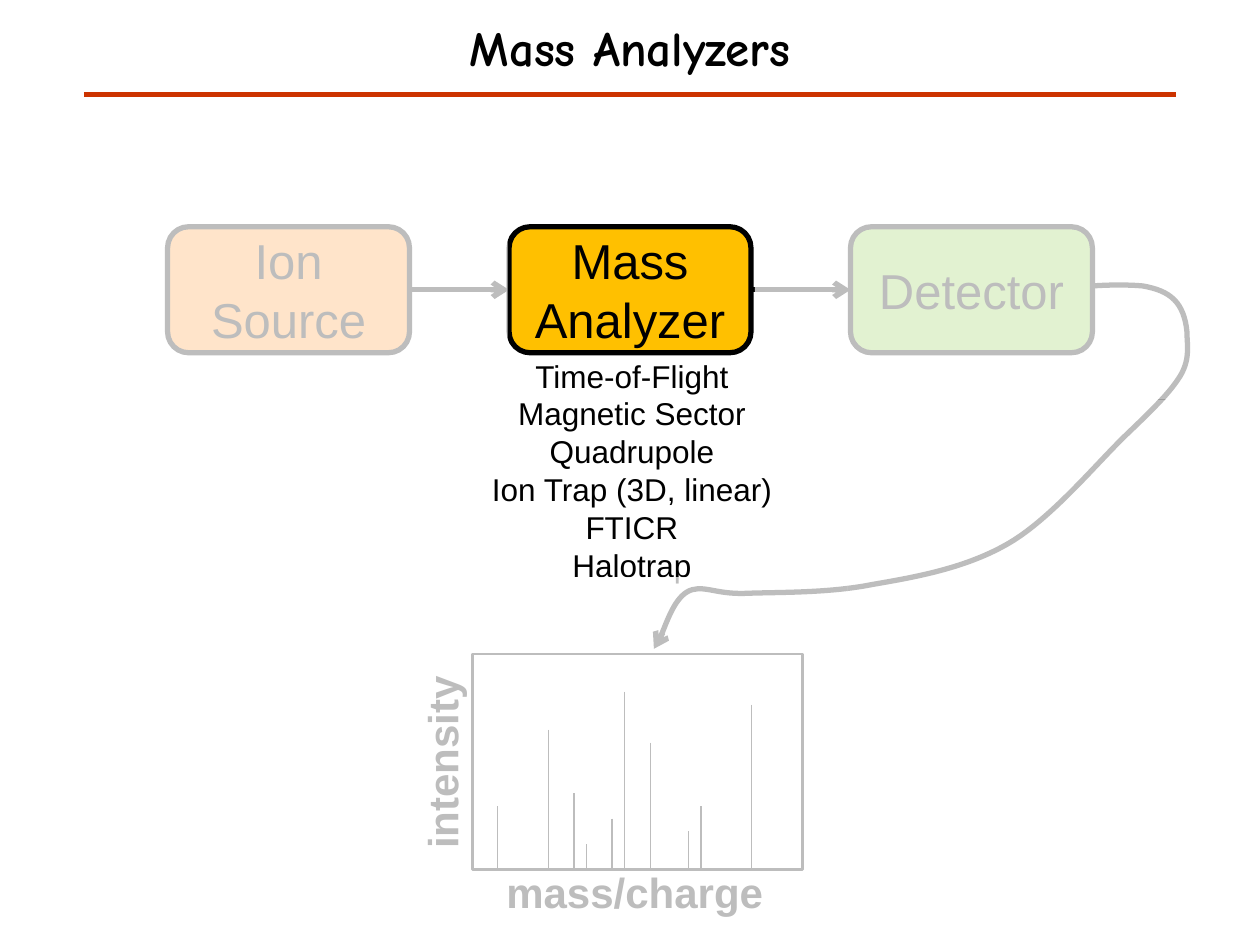
from lxml.etree import SubElement
from pptx import Presentation
from pptx.dml.color import RGBColor
from pptx.enum.shapes import MSO_CONNECTOR as Connector, MSO_SHAPE as Shape
from pptx.enum.text import MSO_ANCHOR as Anchor, MSO_AUTO_SIZE as AutoSize, PP_ALIGN as Align
from pptx.oxml.ns import qn
from pptx.util import Inches, Pt

COLORS = {"ink": "000000", "paper": "FFFFFF", "rule": "CC3300",
          "source": "FF9933", "analyzer": "FFC000", "detector": "92D050"}
WIDTH, HEIGHT = 10, 7.5
TITLE = "Mass Analyzers"
STAGES = [("Ion Source", "source"), ("Mass Analyzer", "analyzer"), ("Detector", "detector")]
ANALYZERS = ["Time-of-Flight", "Magnetic Sector", "Quadrupole",
             "Ion Trap (3D, linear)", "FTICR", "Halotrap"]
STAGE_LEFT, STAGE_TOP, STAGE_WIDTH, STAGE_HEIGHT, STAGE_STEP = 1.33, 1.8, 1.92, 1, 2.71
PLOT_LEFT, PLOT_TOP, PLOT_WIDTH, PLOT_HEIGHT = 3.75, 5.19, 2.62, 1.71
PLOT_COLUMNS, PLOT_ROWS = 26, 17
PEAKS = {2: 5, 6: 11, 8: 6, 9: 2, 11: 4, 12: 14, 14: 10, 17: 3, 18: 5, 22: 13}
AXIS_LABELS = [("mass/charge", (3.92, 6.83, 2.26, 0.5), 0),
               ("intensity", (2.71, 5.79, 1.59, 0.5), 270)]
SIGNAL_START = (8.67, 2.27)
SIGNAL_CURVES = [
    ((8.81, 2.26), (8.96, 2.26), (9.07, 2.27)), ((9.18, 2.29), (9.26, 2.32), (9.32, 2.38)),
    ((9.38, 2.44), (9.41, 2.53), (9.42, 2.63)), ((9.42, 2.73), (9.45, 2.84), (9.37, 2.98)),
    ((9.29, 3.11), (9.17, 3.23), (8.94, 3.45)), ((8.71, 3.67), (8.35, 4.11), (8.01, 4.31)),
    ((7.67, 4.51), (7.27, 4.58), (6.92, 4.64)), ((6.57, 4.71), (6.16, 4.7), (5.92, 4.71)),
    ((5.67, 4.72), (5.57, 4.63), (5.45, 4.7)), ((5.34, 4.77), (5.26, 5.04), (5.21, 5.12)),
    ((5.17, 5.19), (5.18, 5.17), (5.19, 5.15))]
VEILS = [(5.99, 0.88, 3.62, 2.29), (0.41, 0.86, 3.62, 2.31),
         (2.92, 4.58, 3.81, HEIGHT - 4.58), (6.73, 3.17, 2.94, 3.5)]


def color(name):
    """Return the named colour."""
    return RGBColor.from_string(COLORS[name])


def inches(values):
    """Convert numbers to lengths."""
    return [Inches(value) for value in values]


def place(shape, box):
    """Move and size a shape."""
    for name, value in zip(("left", "top", "width", "height"), inches(box)):
        setattr(shape, name, value)


def write(shape, lines, size, align=Align.CENTER, font="Arial", bold=False, **frame_format):
    """Fill a shape with formatted paragraphs."""
    frame = shape.text_frame
    frame.text = "\n".join(lines)
    for name, value in frame_format.items():
        setattr(frame, name, value)
    for paragraph in frame.paragraphs:
        paragraph.alignment = align
        paragraph.space_before = Pt(0)
        run_font = paragraph.runs[0].font
        for name, value in {"name": font, "size": Pt(size), "bold": bold}.items():
            setattr(run_font, name, value)
        run_font.color.rgb = color("ink")


def stroke(shape, name, width, arrow=False):
    """Format an outline, with an optional arrowhead."""
    shape.line.color.rgb = color(name)
    shape.line.width = Pt(width)
    if arrow:
        SubElement(shape.line._get_or_add_ln(), qn("a:tailEnd"), type="arrow")


def add_box(shapes, kind, box, fill):
    """Add a filled shape without shadow."""
    shape = shapes.add_shape(kind, *inches(box))
    shape.shadow.inherit = False
    shape.fill.solid()
    shape.fill.fore_color.rgb = color(fill)
    return shape


def add_line(shapes, start, end, name, width, arrow=False):
    """Add a straight line without shadow."""
    line = shapes.add_connector(Connector.STRAIGHT, *inches(start + end))
    stroke(line, name, width, arrow)
    SubElement(line._element.spPr, qn("a:effectLst"))


def add_signal(shapes):
    """Add the curved arrow from detector to spectrum."""
    builder = shapes.build_freeform(*inches(SIGNAL_START), scale=1.0)
    builder.add_line_segments([inches(point) for curve in SIGNAL_CURVES for point in curve],
                              close=False)
    signal = builder.convert_to_shape()
    signal.shadow.inherit = False
    signal.fill.background()
    stroke(signal, "ink", 3, arrow=True)
    segments = list(signal._element.iter(qn("a:lnTo")))
    outline = segments[0].getparent()
    for first in range(0, len(segments), 3):
        curve = SubElement(outline, qn("a:cubicBezTo"))
        for segment in segments[first:first + 3]:
            curve.append(segment[0])
            outline.remove(segment)


def add_spectrum(shapes):
    """Add the framed peaks as one group."""
    group = shapes.add_group_shape().shapes
    frame = add_box(group, Shape.RECTANGLE, (PLOT_LEFT, PLOT_TOP, PLOT_WIDTH, PLOT_HEIGHT), "paper")
    stroke(frame, "ink", 1.5)
    base = PLOT_TOP + PLOT_HEIGHT
    for column, intensity in PEAKS.items():
        x = PLOT_LEFT + column * PLOT_WIDTH / PLOT_COLUMNS
        top = base - intensity * PLOT_HEIGHT / PLOT_ROWS
        add_line(group, (x, top), (x, base), "ink", 0.75)


def add_veil(shapes, box):
    """Add a translucent white cover."""
    veil = add_box(shapes, Shape.RECTANGLE, box, "paper")
    veil.line.fill.background()
    tint = veil._element.spPr.find(qn("a:solidFill"))[0]
    SubElement(tint, qn("a:alpha"), val="74000")


def main():
    """Build the slide."""
    presentation = Presentation()
    presentation.slide_width, presentation.slide_height = inches((WIDTH, HEIGHT))
    slide = presentation.slides.add_slide(presentation.slide_layouts[1])
    shapes = slide.shapes
    title, body = slide.placeholders

    place(title, (0, 0, WIDTH, HEIGHT / 10))
    write(title, [TITLE], 28, font="Comic Neue", bold=True, vertical_anchor=Anchor.MIDDLE)
    add_line(shapes, (WIDTH / 15, HEIGHT / 10), (WIDTH * 14 / 15, HEIGHT / 10), "rule", 2.5)

    place(body, (3.79, 2.78, 2.45, 1.92))
    write(body, ANALYZERS, 18, word_wrap=False, auto_size=AutoSize.SHAPE_TO_FIT_TEXT)
    for paragraph in body.text_frame.paragraphs:
        properties = paragraph._p.get_or_add_pPr()
        properties.set("marL", "0")
        properties.set("indent", "0")
        SubElement(properties, qn("a:buNone"))

    middle = STAGE_TOP + STAGE_HEIGHT / 2
    for index, (label, fill) in enumerate(STAGES):
        left = STAGE_LEFT + index * STAGE_STEP
        stage = add_box(shapes, Shape.ROUNDED_RECTANGLE,
                        (left, STAGE_TOP, STAGE_WIDTH, STAGE_HEIGHT), fill)
        stroke(stage, "ink", 3)
        write(stage, [label], 28, vertical_anchor=Anchor.MIDDLE, word_wrap=True)
        if index:
            add_line(shapes, (left - STAGE_STEP + STAGE_WIDTH, middle), (left, middle),
                     "ink", 3, arrow=True)

    add_spectrum(shapes)
    for label, box, rotation in AXIS_LABELS:
        text_box = shapes.add_textbox(*inches(box))
        text_box.rotation = rotation
        write(text_box, [label], 24, Align.LEFT, bold=True, word_wrap=False,
              auto_size=AutoSize.SHAPE_TO_FIT_TEXT)
    add_signal(shapes)
    for box in VEILS:
        add_veil(shapes, box)
    presentation.save("out.pptx")


main()
